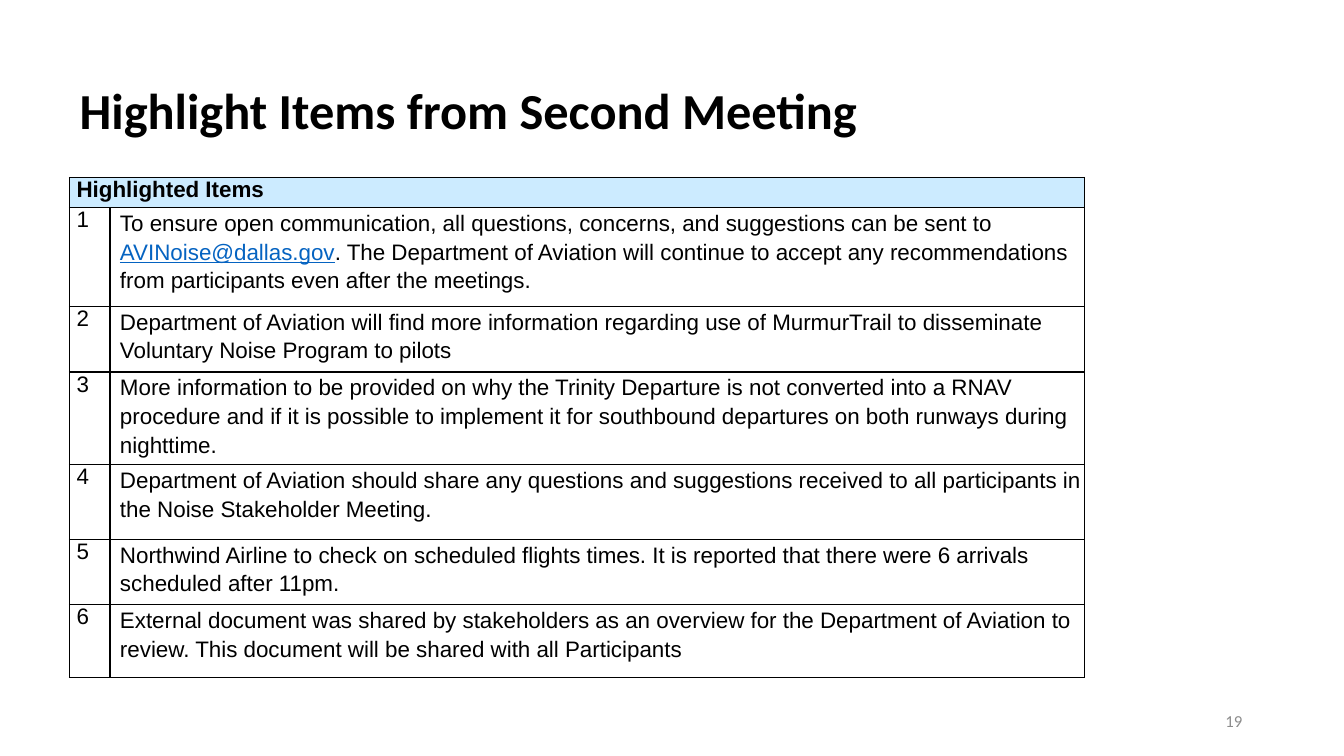
import pptx
import pptx.dml.color
import pptx.enum.text
import pptx.oxml
import pptx.oxml.ns
import pptx.util
from pptx.util import Inches

COLOURS = {
    "text": "000000",
    "border": "000000",
    "header": "CCEBFF",
    "cell": "FFFFFF",
    "link": "0563C1",
    "number": "8C8C8C",
}
LINK = "AVINoise@dallas.gov"
ITEMS = [
    "To ensure open communication, all questions, concerns, and suggestions can be sent to "
    + LINK + ". The Department of Aviation will continue to accept any "
    "recommendations from participants even after the meetings.",
    "Department of Aviation will find more information regarding use of MurmurTrail to "
    "disseminate Voluntary Noise Program to pilots",
    "More information to be provided on why the Trinity Departure is not converted into a RNAV "
    "procedure and if it is possible to implement it for southbound departures on both runways "
    "during nighttime.",
    "Department of Aviation should share any questions and suggestions received to all "
    "participants in the Noise Stakeholder Meeting.",
    "Northwind Airline to check on scheduled flights times. It is reported that there were 6 "
    "arrivals scheduled after 11pm.",
    "External document was shared by stakeholders as an overview for the Department of Aviation "
    "to review. This document will be shared with all Participants",
]
COLUMN_WIDTHS = [0.4, 9.67]
ROW_HEIGHTS = [0.3, 0.98, 0.65, 0.88, 0.74, 0.65, 0.72]


def colour(name):
    return pptx.dml.color.RGBColor.from_string(COLOURS[name])


def format_run(run, font, size, colour_name="text", bold=False):
    run.font.name = font
    run.font.size = pptx.util.Pt(size)
    run.font.bold = bold
    run.font.color.rgb = colour(colour_name)


def add_title(slide, left, top, width, height):
    title = slide.shapes.title
    title.left, title.top = Inches(left), Inches(top)
    title.width, title.height = Inches(width), Inches(height)
    frame = title.text_frame
    frame.text = "Highlight Items from Second Meeting"
    frame.auto_size = pptx.enum.text.MSO_AUTO_SIZE.NONE
    frame.vertical_anchor = pptx.enum.text.MSO_ANCHOR.MIDDLE
    paragraph = frame.paragraphs[0]
    paragraph.alignment = pptx.enum.text.PP_ALIGN.LEFT
    paragraph.line_spacing = 0.9
    format_run(paragraph.runs[0], "Calibri", 36, bold=True)


def add_page_number(slide, left, top, width, height):
    box = slide.shapes.add_textbox(Inches(left), Inches(top), Inches(width), Inches(height))
    frame = box.text_frame
    frame.word_wrap = True
    frame.vertical_anchor = pptx.enum.text.MSO_ANCHOR.MIDDLE
    frame.text = "19"
    paragraph = frame.paragraphs[0]
    paragraph.alignment = pptx.enum.text.PP_ALIGN.RIGHT
    format_run(paragraph.runs[0], "Calibri", 12, "number")


def style_cell(cell, fill, indent):
    cell.margin_left = Inches(indent)
    cell.margin_right = cell.margin_top = cell.margin_bottom = 0
    cell.fill.solid()
    cell.fill.fore_color.rgb = colour(fill)
    properties = cell._tc.get_or_add_tcPr()
    for position, side in enumerate(("lnL", "lnR", "lnT", "lnB")):
        properties.insert(position, pptx.oxml.parse_xml(
            f'<a:{side} {pptx.oxml.ns.nsdecls("a")} w="12700"><a:solidFill>'
            f'<a:srgbClr val="{COLOURS["border"]}"/></a:solidFill></a:{side}>'))


def write_cell(cell, text, space_before, line_spacing=1.0, bold=False):
    """Write one paragraph, with the e-mail address set as a link."""
    paragraph = cell.text_frame.paragraphs[0]
    paragraph.space_before = pptx.util.Pt(space_before)
    paragraph.line_spacing = line_spacing
    before, link, after = text.partition(LINK)
    for part in filter(None, (before, link, after)):
        run = paragraph.add_run()
        run.text = part
        format_run(run, "Arial", 16, "link" if part == LINK else "text", bold)
        if part == LINK:
            run.font.underline = True


def add_items_table(slide, left, top, width, height):
    table = slide.shapes.add_table(
        len(ROW_HEIGHTS), len(COLUMN_WIDTHS),
        Inches(left), Inches(top), Inches(width), Inches(height)).table
    table.first_row = table.horz_banding = False
    for column, column_width in zip(table.columns, COLUMN_WIDTHS):
        column.width = Inches(column_width)
    for index, (row, row_height) in enumerate(zip(table.rows, ROW_HEIGHTS)):
        row.height = Inches(row_height)
        for cell, indent in zip(row.cells, (0.07, 0.1)):
            style_cell(cell, "cell" if index else "header", indent)

    table.cell(0, 0).merge(table.cell(0, 1))
    write_cell(table.cell(0, 0), "Highlighted Items", 3.1, bold=True)
    for number, item in enumerate(ITEMS, start=1):
        write_cell(table.cell(number, 0), str(number), 2.8)
        write_cell(table.cell(number, 1), item, 3, line_spacing=1.15)


def main():
    presentation = pptx.Presentation()
    presentation.slide_width, presentation.slide_height = Inches(13.33), Inches(7.5)
    slide = presentation.slides.add_slide(presentation.slide_layouts[5])
    add_title(slide, 0.69, 0.4, 11.5, 1.45)
    add_page_number(slide, 9.42, 6.95, 3, 0.4)
    add_items_table(slide, 0.69, 1.76, sum(COLUMN_WIDTHS), sum(ROW_HEIGHTS))
    presentation.save("out.pptx")


if __name__ == "__main__":
    main()
